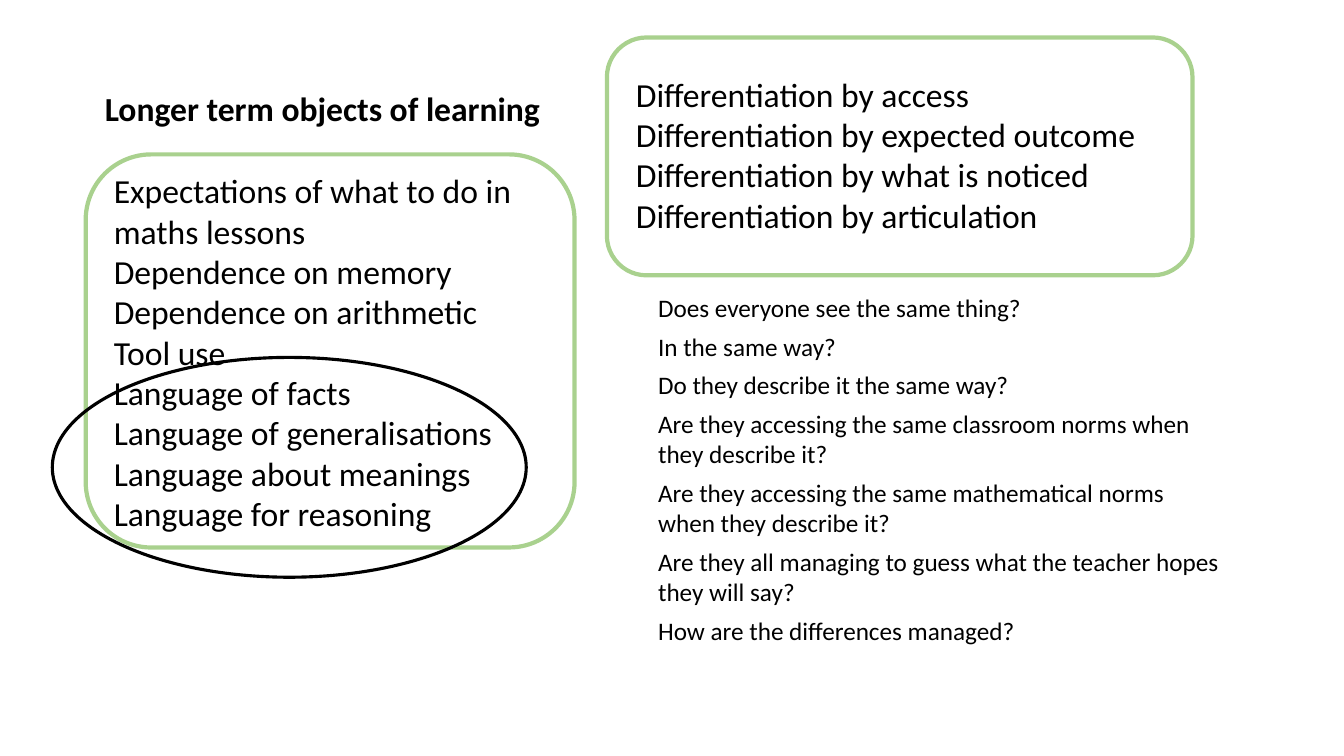
from pptx import Presentation
from pptx.dml.color import RGBColor
from pptx.enum.shapes import MSO_SHAPE as SHAPE
from pptx.enum.text import MSO_ANCHOR as ANCHOR, MSO_AUTO_SIZE as AUTO, PP_ALIGN as ALIGN
from pptx.util import Pt

BLACK = RGBColor(0x00, 0x00, 0x00)
WHITE = RGBColor(0xFF, 0xFF, 0xFF)
GREEN = RGBColor(0xA9, 0xD1, 0x8E)

prs = Presentation()
prs.slide_width, prs.slide_height = Pt(960), Pt(540)
s = prs.slides.add_slide(prs.slide_layouts[5])


def write(sp, lines, size, bold=False, before=0):
    tf = sp.text_frame
    tf.word_wrap = True
    tf.auto_size = AUTO.NONE
    tf.vertical_anchor = ANCHOR.TOP
    tf.text = "\n".join(lines)
    for p in tf.paragraphs:
        p.alignment = ALIGN.LEFT
        p.line_spacing = 1.0
        p.space_before = Pt(before)
        p.font.name = "Calibri"
        p.font.size = Pt(size)
        p.font.bold = bold
        p.font.color.rgb = BLACK


def outline(kind, box, color, width):
    sp = s.shapes.add_shape(kind, *map(Pt, box))
    sp.shadow.inherit = False
    sp.fill.background()
    sp.line.color.rgb = color
    sp.line.width = Pt(width)


# Title
title = s.shapes.title
title.left, title.top, title.width, title.height = Pt(67.7), Pt(59), Pt(504.7), Pt(131)
write(title, ["Longer term objects of learning"], 24, bold=True)

# Green panels, each with its list
panels = [
    ((433.5, 26.8, 418.3, 169.9), (447.1, 49, 380.2, 123.8), [
        "Differentiation by access",
        "Differentiation by expected outcome",
        "Differentiation by what is noticed",
        "Differentiation by articulation",
    ]),
    ((61.2, 110.3, 349.2, 280.8), (74.2, 118.1, 324, 312.5), [
        "Expectations of what to do in maths lessons",
        "Dependence on memory",
        "Dependence on arithmetic",
        "Tool use",
        "Language of facts",
        "Language of generalisations",
        "Language about meanings",
        "Language for reasoning",
    ]),
]
for frame, text_box, lines in panels:
    outline(SHAPE.ROUNDED_RECTANGLE, frame, GREEN, 3)
    write(s.shapes.add_textbox(*map(Pt, text_box)), lines, 24)

# Questions
questions = s.shapes.add_shape(SHAPE.RECTANGLE, Pt(463), Pt(205.2), Pt(415.5), Pt(262))
questions.shadow.inherit = False
questions.fill.solid()
questions.fill.fore_color.rgb = WHITE
questions.line.fill.background()
write(questions, [
    "Does everyone see the same thing?",
    "In the same way?",
    "Do they describe it the same way?",
    "Are they accessing the same classroom norms when they describe it?",
    "Are they accessing the same mathematical norms when they describe it?",
    "Are they all managing to guess what the teacher hopes they will say?",
    "How are the differences managed?",
], 18, before=6)

# Ellipse around the language items
outline(SHAPE.OVAL, (37.4, 255.3, 338.5, 157.5 - 0.5), BLACK, 2.25)

prs.save("out.pptx")
